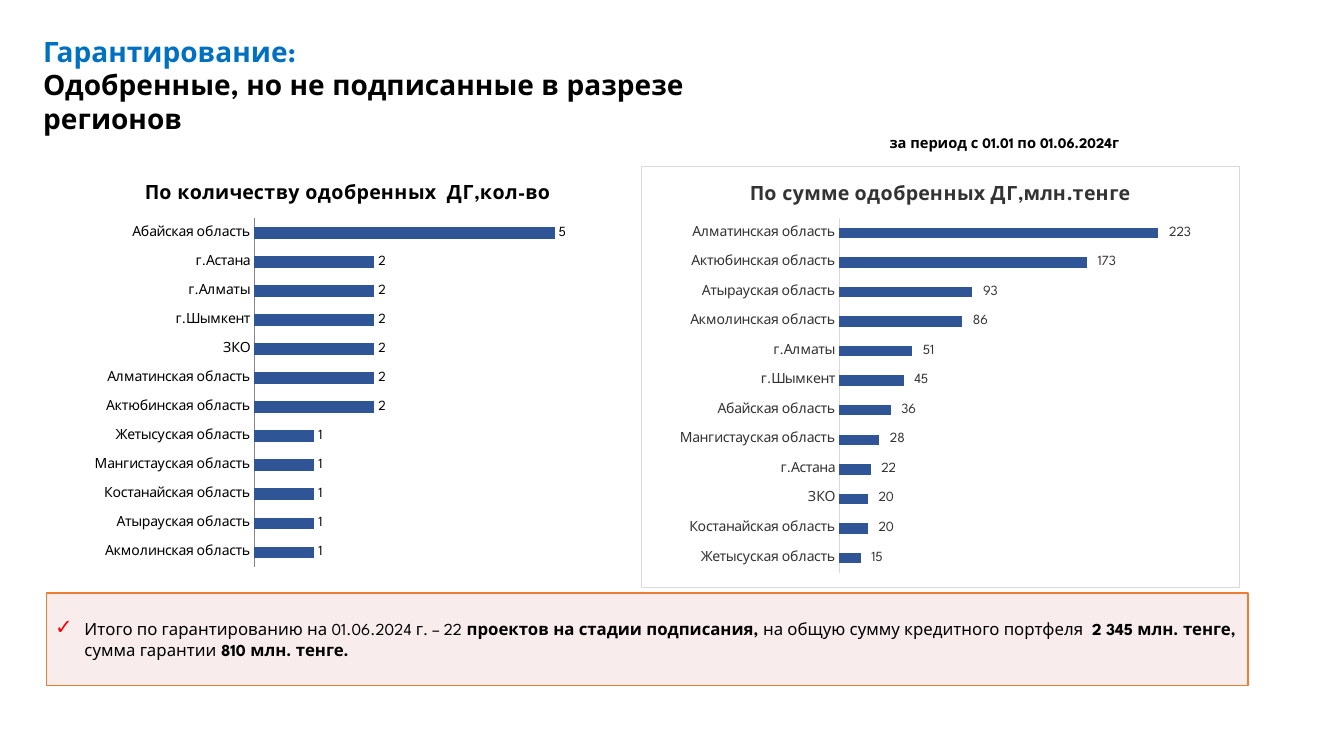
from dataclasses import dataclass

from lxml import etree
from pptx import Presentation
from pptx.chart.data import CategoryChartData
from pptx.dml.color import RGBColor
from pptx.enum.chart import XL_CHART_TYPE, XL_LABEL_POSITION, XL_TICK_LABEL_POSITION, XL_TICK_MARK
from pptx.enum.shapes import MSO_SHAPE
from pptx.enum.text import MSO_ANCHOR, MSO_AUTO_SIZE, PP_ALIGN
from pptx.oxml import parse_xml
from pptx.oxml.ns import nsdecls, qn
from pptx.util import Cm, Pt

BAR = XL_CHART_TYPE.BAR_CLUSTERED
OUTSIDE = XL_LABEL_POSITION.OUTSIDE_END
NEXT_TO = XL_TICK_LABEL_POSITION.NEXT_TO_AXIS
NO_TICK = XL_TICK_MARK.NONE
RECT = MSO_SHAPE.RECTANGLE
MIDDLE = MSO_ANCHOR.MIDDLE
GROW = MSO_AUTO_SIZE.SHAPE_TO_FIT_TEXT
LEFT = PP_ALIGN.LEFT


@dataclass(frozen=True)
class Theme:
    font: str = "League Spartan"
    chart_font: str = "Calibri"
    black: str = "000000"
    dark: str = "333333"
    blue: str = "0070C0"
    bar: str = "2F5597"
    axis: str = "868686"
    border: str = "D9D9D9"
    white: str = "FFFFFF"
    pink: str = "F2DCDB"
    orange: str = "ED7D31"
    red: str = "FF0000"
    heading: float = 20
    chart_title: float = 14
    body: float = 12
    period: float = 10.5
    label: float = 10


@dataclass(frozen=True)
class Box:
    left: float
    top: float
    width: float
    height: float

    def lengths(self) -> tuple:
        return Cm(self.left), Cm(self.top), Cm(self.width), Cm(self.height)


@dataclass(frozen=True)
class RegionChart:
    box: Box
    title: str
    regions: tuple[tuple[str, int], ...]
    plot: tuple[float, float, float, float]
    gap: int
    maximum: int
    color: str
    axis: str
    number_format: str = "General"
    framed: bool = False


T = Theme()
MONEY = r'_-* #\ ##0_р_._-;\-* #\ ##0_р_._-;_-* "-"??_р_._-;_-@_-'

CHARTS = (
    RegionChart(
        Box(1.4, 4.19, 14.73, 10.52), "По количеству одобренных  ДГ,кол-во",
        (("Акмолинская область", 1), ("Атырауская область", 1), ("Костанайская область", 1),
         ("Мангистауская область", 1), ("Жетысуская область", 1), ("Актюбинская область", 2),
         ("Алматинская область", 2), ("ЗКО", 2), ("г.Шымкент", 2), ("г.Алматы", 2),
         ("г.Астана", 2), ("Абайская область", 5)),
        (0.34, 0.125, 0.617, 0.835), 150, 6, T.black, T.axis),
    RegionChart(
        Box(16.15, 4.19, 15.09, 10.64), "По сумме одобренных ДГ,млн.тенге",
        (("Жетысуская область", 15), ("Костанайская область", 20), ("ЗКО", 20),
         ("г.Астана", 22), ("Мангистауская область", 28), ("Абайская область", 36),
         ("г.Шымкент", 45), ("г.Алматы", 51), ("Акмолинская область", 86),
         ("Атырауская область", 93), ("Актюбинская область", 173), ("Алматинская область", 223)),
        (0.331, 0.122, 0.599, 0.842), 182, 250, T.dark, T.border, MONEY, True),
)

SUMMARY = (
    ("Итого по гарантированию на 01.06.2024 г. – 22 ", False),
    ("проектов на стадии подписания, ", True),
    ("на общую сумму кредитного портфеля  ", False),
    ("2 345 млн. тенге, ", True),
    ("сумма гарантии", False),
    (" 810 млн. тенге.", True),
)


def set_font(font, *, size: float, color: str, bold: bool = False, name: str = T.font) -> None:
    font.name, font.size, font.bold = name, Pt(size), bold
    font.color.rgb = RGBColor.from_string(color)


def add_text(p, text: str, **fmt) -> None:
    r = p.add_run()
    r.text = text
    set_font(r.font, **fmt)


def add_box(s, box: Box, wrap: bool = True):
    tf = s.shapes.add_textbox(*box.lengths()).text_frame
    tf.word_wrap = wrap
    tf.auto_size = GROW
    return tf.paragraphs[0]


def add_bullet(p, char: str, color: str, percent: int) -> None:
    pPr = p._p.get_or_add_pPr()
    pPr.set("marL", str(Cm(0.76)))
    pPr.set("indent", str(Cm(-0.74)))
    clr = etree.SubElement(pPr, qn("a:buClr"))
    etree.SubElement(clr, qn("a:srgbClr"), val=color)
    etree.SubElement(pPr, qn("a:buSzPct"), val=str(percent * 1000))
    etree.SubElement(pPr, qn("a:buFont"), typeface=T.font)
    etree.SubElement(pPr, qn("a:buChar"), char=char)


def add_summary(s, box: Box) -> None:
    sp = s.shapes.add_shape(RECT, *box.lengths())
    sp.shadow.inherit = False
    sp.fill.solid()
    sp.fill.fore_color.rgb = RGBColor.from_string(T.pink)
    clr = sp._element.spPr.find(qn("a:solidFill")).find(qn("a:srgbClr"))
    etree.SubElement(clr, qn("a:alpha"), val="50000")
    sp.line.color.rgb = RGBColor.from_string(T.orange)
    sp.line.width = Pt(1)
    tf = sp.text_frame
    tf.word_wrap = True
    tf.vertical_anchor = MIDDLE
    tf.margin_left = tf.margin_right = Cm(0.2)
    tf.margin_top = tf.margin_bottom = Cm(0.1)
    p = tf.paragraphs[0]
    add_bullet(p, "✓", T.red, 125)
    p.alignment = LEFT
    p.space_after = Pt(6)
    for text, bold in SUMMARY:
        add_text(p, text, size=T.body, color=T.black, bold=bold)


def set_plot_layout(chart, plot: tuple[float, float, float, float]) -> None:
    area = chart._chartSpace.chart.plotArea
    for old in area.findall(qn("c:layout")):
        area.remove(old)
    layout = etree.Element(qn("c:layout"))
    manual = etree.SubElement(layout, qn("c:manualLayout"))
    values = (("layoutTarget", "inner"), ("xMode", "edge"), ("yMode", "edge"),
              *zip("xywh", map(str, plot)))
    for tag, val in values:
        etree.SubElement(manual, qn(f"c:{tag}"), val=val)
    area.insert(0, layout)


def set_frame(chart, framed: bool) -> None:
    def fill(color: str) -> str:
        return f'<a:solidFill><a:srgbClr val="{color}"/></a:solidFill>' if framed else "<a:noFill/>"

    chart._chartSpace.chart.addnext(parse_xml(
        f'<c:spPr {nsdecls("c", "a")}>{fill(T.white)}'
        f'<a:ln w="{Pt(0.75)}">{fill(T.border)}</a:ln></c:spPr>'))


def add_region_chart(s, item: RegionChart) -> None:
    data = CategoryChartData(number_format=item.number_format)
    data.categories = [region for region, _ in item.regions]
    data.add_series("Series 1", [value for _, value in item.regions])
    chart = s.shapes.add_chart(BAR, *item.box.lengths(), data).chart
    set_font(chart.font, size=T.label, color=T.black, name=T.chart_font)
    chart.has_legend = False
    chart.has_title = True
    add_text(chart.chart_title.text_frame.paragraphs[0], item.title,
             size=T.chart_title, color=item.color, bold=True)
    chart.chart_title.include_in_layout = False

    values = chart.value_axis
    values.visible = values.has_major_gridlines = False
    values.major_tick_mark = values.minor_tick_mark = NO_TICK
    values.minimum_scale, values.maximum_scale = 0, item.maximum
    cats = chart.category_axis
    cats.major_tick_mark = cats.minor_tick_mark = NO_TICK
    cats.tick_label_position = NEXT_TO
    cats.format.line.color.rgb = RGBColor.from_string(item.axis)
    cats.format.line.width = Pt(0.75)
    set_font(cats.tick_labels.font, size=T.label, color=item.color)

    plot = chart.plots[0]
    plot.gap_width = item.gap
    plot.vary_by_categories = False
    series = plot.series[0]
    series.format.fill.solid()
    series.format.fill.fore_color.rgb = RGBColor.from_string(T.bar)
    labels = series.data_labels
    labels.show_value = True
    labels.position = OUTSIDE
    labels.number_format = item.number_format
    labels.number_format_is_linked = False
    set_font(labels.font, size=T.label, color=item.color)
    set_plot_layout(chart, item.plot)
    set_frame(chart, item.framed)


def main() -> None:
    prs = Presentation()
    prs.slide_width, prs.slide_height = Cm(33.87), Cm(19.05)
    s = prs.slides.add_slide(prs.slide_layouts[6])
    p = add_box(s, Box(0.84, 0.74, 19.99, 2.82))
    add_text(p, "Гарантирование:", size=T.heading, color=T.blue, bold=True)
    p.add_line_break()
    add_text(p, "Одобренные, но не подписанные в разрезе регионов",
             size=T.heading, color=T.black, bold=True)
    p = add_box(s, Box(22.17, 3.25, 6.55, 0.71), wrap=False)
    add_text(p, "за период с 01.01 по 01.06.2024г", size=T.period, color=T.black, bold=True)
    add_summary(s, Box(1.17, 14.94, 30.28, 2.34))
    for item in CHARTS:
        add_region_chart(s, item)
    prs.save("out.pptx")


if __name__ == "__main__":
    main()
